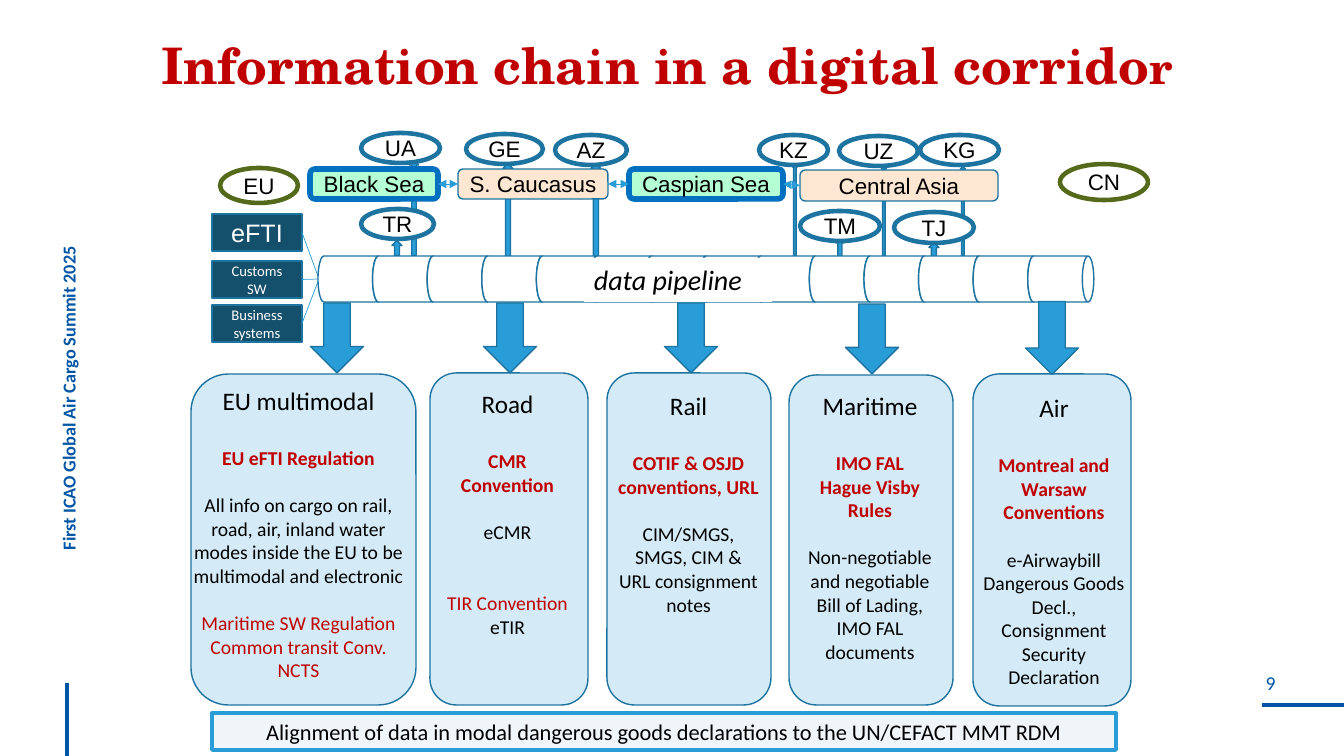
from lxml import etree
from pptx import Presentation
from pptx import util as u
from pptx.dml.color import RGBColor
from pptx.enum import shapes, text
from pptx.oxml.ns import qn

PX = 12192000 / 1344
KIND, SIDE, EDGE = shapes.MSO_SHAPE, text.PP_ALIGN, text.MSO_ANCHOR
RED, BLACK, WHITE = "C00000", "000000", "FFFFFF"
NAVY, BLUE, SKY, OLIVE = "0055A5", "1E74A0", "289DD8", "54691A"

# Content: name, left, top, width, height, ...
STATES = [
    ("UA", 361, 133, 79, 30, BLUE), ("TR", 361, 209, 73, 30, BLUE),
    ("GE", 466, 134, 77, 30, BLUE), ("AZ", 555, 135, 72, 30, BLUE),
    ("KZ", 759, 135, 69, 30, BLUE), ("UZ", 839, 136, 79, 30, BLUE),
    ("KG", 920, 135, 79, 30, BLUE), ("TM", 800, 211, 80, 30, BLUE),
    ("TJ", 894, 212, 80, 31, BLUE), ("EU", 220, 168, 78, 35, OLIVE),
    ("CN", 1060, 164, 88, 36, OLIVE),
]
SEA, LAND = ("B4FFD4", "0070C0", 4), ("FDE6D2", BLUE, 1)
REGIONS = [
    ("Black Sea", 310, 169, 128, 30, SEA),
    ("S. Caucasus", 458, 169, 150, 30, LAND),
    ("Caspian Sea", 629, 169, 154, 30, SEA),
    ("Central Asia", 800, 170, 198, 31, LAND),
]
SYSTEMS = [("eFTI", 214, 18, "Arial"), ("Customs SW", 261, 10.5, "Calibri"),
           ("Business systems", 305, 10.5, "Calibri")]
# Arrows: centre x, centre y, length, thickness
RISERS = [
    (934, 250, 15, 10), (840, 249, 20, 8), (963, 214, 95, 5),
    (884, 214, 95, 5), (795, 212, 95, 5), (596, 211, 95, 10),
    (508, 211, 95, 10), (414, 208, 95, 9), (397, 248, 15, 10),
]
DROPS = [(337, 338, 70, 53), (510, 338, 70, 53), (691, 338, 70, 53),
         (872, 339, 70, 53), (1052, 338, 73, 53)]
# Text styles inside the cards
HEAD = dict(size=18)
LAW = dict(color=RED, bold=True)
ALSO = dict(color=RED)
DOC = dict()
# Cards: card box, text box, lines as (words, style, space before in points)
CARDS = [
    ((191, 374, 225, 331), (183, 380, 231, 308), [
        ("EU multimodal", HEAD, 0), ("EU eFTI Regulation", LAW, 22),
        ("All info on cargo on rail, road, air, inland water modes inside "
         "the EU to be multimodal and electronic", DOC, 17),
        ("Maritime SW Regulation", ALSO, 17),
        ("Common transit Conv. NCTS", ALSO, 0)]),
    ((430, 373, 158, 332), (433, 383, 149, 322), [
        ("Road", HEAD, 0), ("CMR Convention", LAW, 22), ("eCMR", DOC, 17),
        ("TIR Convention", ALSO, 34), ("eTIR", DOC, 0)]),
    ((607, 373, 164, 332), (608, 385, 161, 238), [
        ("Rail", HEAD, 0), ("COTIF & OSJD conventions, URL", LAW, 22),
        ("CIM/SMGS, SMGS, CIM & URL consignment notes", DOC, 17)]),
    ((789, 375, 164, 330), (788, 385, 164, 315), [
        ("Maritime", HEAD, 0), ("IMO FAL", LAW, 22),
        ("Hague Visby Rules", LAW, 0),
        ("Non-negotiable and negotiable Bill of Lading, IMO FAL documents",
         DOC, 17)]),
    ((973, 374, 158, 332), (972, 387, 164, 308), [
        ("Air", HEAD, 0), ("Montreal and Warsaw Conventions", LAW, 22),
        ("e-Airwaybill", DOC, 17), ("Dangerous Goods Decl.,", DOC, 0),
        ("Consignment Security Declaration", DOC, 0)]),
]

deck = Presentation()
deck.slide_width, deck.slide_height = u.Emu(12192000), u.Emu(6858000)
page = deck.slides.add_slide(deck.slide_layouts[5])


def px(*nums):
    return [u.Emu(round(n * PX)) for n in nums]


def rgb(code):
    return RGBColor.from_string(code)


def shape(kind, x, y, w, h, fill, line=None, wide=1, turn=0):
    item = page.shapes.add_shape(kind, *px(x, y, w, h))
    item.shadow.inherit = False
    item.rotation = turn
    item.fill.solid()
    item.fill.fore_color.rgb = rgb(fill)
    if line:
        item.line.color.rgb = rgb(line)
        item.line.width = u.Pt(wide)
    else:
        item.line.fill.background()
    return item


def label(x, y, w, h, turn=0):
    item = page.shapes.add_textbox(*px(x, y, w, h))
    item.rotation = turn
    return item


def say(item, words, size=14, color=BLACK, face="Calibri", bold=False,
        italic=False, side=SIDE.CENTER, edge=EDGE.TOP, gap=0, pad=None,
        wrap=True, same=False):
    """Add a paragraph, or a run to the last one when same is True."""
    frame = item.text_frame
    frame.word_wrap, frame.vertical_anchor = wrap, edge
    if pad is not None:
        frame.margin_left = frame.margin_right = u.Pt(pad)
        frame.margin_top = frame.margin_bottom = u.Pt(pad)
    para = frame.paragraphs[-1]
    if para.runs and not same:
        para = frame.add_paragraph()
    para.alignment = side
    if gap:
        para.space_before = u.Pt(gap)
    run = para.add_run()
    run.text = words
    font = run.font
    font.name, font.size, font.bold, font.italic = face, u.Pt(size), bold, italic
    font.color.rgb = rgb(color)
    return para


def join(x1, y1, x2, y2, color, wide, start=None, end=None, tips=False):
    wire = page.shapes.add_connector(shapes.MSO_CONNECTOR.STRAIGHT,
                                     *px(x1, y1, x2, y2))
    wire.line.color.rgb = rgb(color)
    wire.line.width = u.Pt(wide)
    if start is not None:
        wire.begin_connect(start, 3)
    if end is not None:
        wire.end_connect(end, 1)
    if tips:
        for tag in ("a:headEnd", "a:tailEnd"):
            etree.SubElement(wire.line._get_or_add_ln(), qn(tag), type="triangle")
    etree.SubElement(wire._element.spPr, qn("a:effectLst"))


def arrow(cx, cy, long, thick, turn):
    shape(KIND.RIGHT_ARROW, cx - long / 2, cy - thick / 2, long, thick,
          SKY, BLUE, turn=turn)


# Page frame
join(1262, 705, 1344, 705, NAVY, 3)
join(67, 683, 67, 756, NAVY, 3)
say(label(1210, 671, 121, 33), "9", color=NAVY, pad=0, wrap=False)
side = say(label(-188, 285, 518, 32, 270), "First ICAO Global Air Cargo Summit 2025",
           size=13, color=NAVY, bold=True, side=SIDE.LEFT)
side.line_spacing = 0.9

# Title
title = page.shapes.title
title.left, title.top, title.width, title.height = px(151, 29, 1033, 72)
title.text_frame.auto_size = text.MSO_AUTO_SIZE.NONE
look = dict(color=RED, face="TeX Gyre Schola", bold=True, side=SIDE.LEFT)
say(title, "Information chain in a digital corrido", size=36, **look)
say(title, "r", size=32, same=True, **look)

# Arrows from the pipeline up to the states
for spot in RISERS:
    arrow(*spot, 270)

# Regions, joined in a row
tag = dict(size=16, face="Arial", edge=EDGE.MIDDLE, pad=0)
last = None
for name, x, y, w, h, (fill, line, wide) in REGIONS:
    area = shape(KIND.ROUNDED_RECTANGLE, x, y, w, h, fill, line, wide)
    say(area, name, **tag)
    if last is not None:
        join(x - 20, y, x, y, SKY, 0.5, last, area, tips=True)
    last = area

# States
for name, x, y, w, h, line in STATES:
    say(shape(KIND.OVAL, x, y, w, h, WHITE, line, 3.25), name, **tag)

# Source systems feeding the pipeline
for name, y, size, face in SYSTEMS:
    unit = shape(KIND.RECTANGLE, 212, y, 90, 37, "144F6C", BLUE)
    say(unit, name, size=size, face=face, color=WHITE, edge=EDGE.MIDDLE)
    join(302, y, 319, 279, SKY, 0.5, unit)

# Pipeline of equal segments
for n in range(14):
    shape(KIND.CAN, 328 + 54.6 * n, 246, 46, 66, WHITE, BLUE, turn=90)
say(shape(KIND.RECTANGLE, 584, 258, 188, 44, WHITE), "data pipeline",
    size=20, italic=True, side=SIDE.LEFT)

# Transport mode cards
for card, body, lines in CARDS:
    shape(KIND.ROUNDED_RECTANGLE, *card, "D4EBF7", BLUE)
    block = label(*body)
    for words, style, gap in lines:
        say(block, words, gap=gap, **style)
for spot in DROPS:
    arrow(*spot, 90)

# Closing bar
say(shape(KIND.RECTANGLE, 212, 713, 904, 37, "F0F5FA", SKY, 2.75),
    "Alignment of data in modal dangerous goods declarations to the "
    "UN/CEFACT MMT RDM", size=16)

deck.save("out.pptx")
